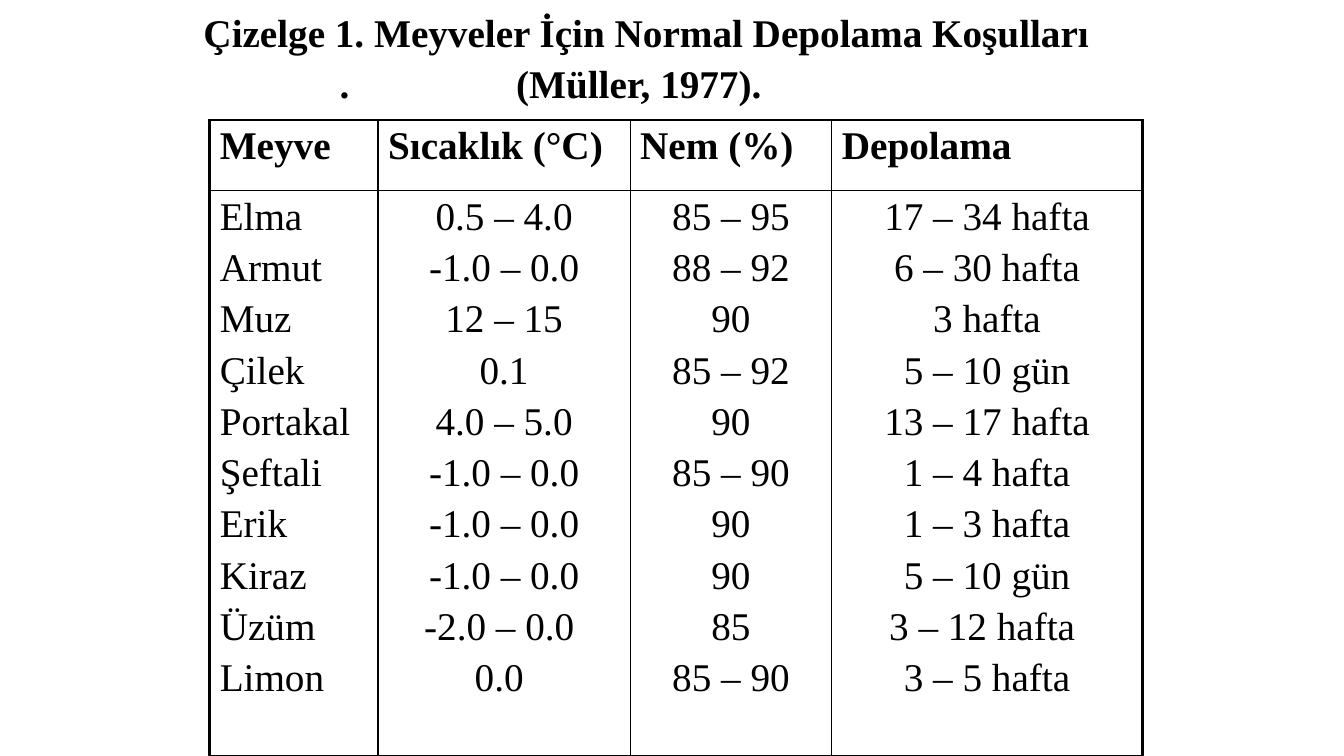
from lxml.etree import SubElement
from pptx import Presentation
from pptx.dml.color import RGBColor
from pptx.enum.text import PP_ALIGN
from pptx.oxml.ns import qn
from pptx.util import Inches, Pt

TITLE = "Çizelge 1. Meyveler İçin Normal Depolama Koşulları\v\t.\t(Müller, 1977)."
TITLE_TABS = (1.35, 3.1)
COLUMNS = [
    ("Meyve", 1.67, PP_ALIGN.LEFT,
     ["Elma", "Armut", "Muz", "Çilek", "Portakal", "Şeftali", "Erik", "Kiraz", "Üzüm", "Limon"]),
    ("Sıcaklık (°C)", 2.5, PP_ALIGN.CENTER,
     ["0.5 – 4.0", "-1.0 – 0.0", "12 – 15", "0.1", "4.0 – 5.0",
      "-1.0 – 0.0", "-1.0 – 0.0", "-1.0 – 0.0", "-2.0 – 0.0 ", "0.0 "]),
    ("Nem (%)", 2, PP_ALIGN.CENTER,
     ["85 – 95", "88 – 92", "90", "85 – 92", "90", "85 – 90", "90", "90", "85", "85 – 90"]),
    ("Depolama", 3.08, PP_ALIGN.CENTER,
     ["17 – 34 hafta", "6 – 30 hafta", "3 hafta", "5 – 10 gün", "13 – 17 hafta",
      "1 – 4 hafta", "1 – 3 hafta", "5 – 10 gün", "3 – 12 hafta ", "3 – 5 hafta"]),
]
ROW_HEIGHTS = (0.7, 5.61)
COLORS = {"ink": "000000", "page": "FFFFFF"}
FONT, SIZE = "Times New Roman", 28
OUTER, INNER = 2.25, 1


def style(para, bold):
    para.font.name = FONT
    para.font.size = Pt(SIZE)
    para.font.bold = bold
    para.font.color.rgb = RGBColor.from_string(COLORS["ink"])


def add_title(page):
    box = page.shapes.add_textbox(Inches(1.92), Inches(0), Inches(9.33), Inches(1.03))
    box.text_frame.word_wrap = True
    para = box.text_frame.paragraphs[0]
    para.text = TITLE
    para.line_spacing = 1.08
    style(para, True)
    properties = para._p.get_or_add_pPr()
    tabs = properties.makeelement(qn("a:tabLst"), {})
    for position in TITLE_TABS:
        SubElement(tabs, qn("a:tab"), pos=str(Inches(position)), algn="l")
    properties.find(qn("a:defRPr")).addprevious(tabs)


def set_borders(cell, widths):
    properties = cell._tc.get_or_add_tcPr()
    for side, width in widths.items():
        line = SubElement(properties, qn(f"a:ln{side}"), w=str(Pt(width)))
        fill = SubElement(line, qn("a:solidFill"))
        SubElement(fill, qn("a:srgbClr"), val=COLORS["ink"])


def fill_cell(cell, lines, align, bold):
    cell.text = "\n".join(lines)
    for index, para in enumerate(cell.text_frame.paragraphs):
        style(para, bold)
        para.alignment = align
        para.space_before = Pt(0.2 * SIZE if index else 0)


def add_storage_table(page):
    widths = [column[1] for column in COLUMNS]
    table = page.shapes.add_table(
        len(ROW_HEIGHTS), len(COLUMNS), Inches(2.08), Inches(1.19),
        Inches(sum(widths)), Inches(sum(ROW_HEIGHTS))).table
    table.first_row = table.horz_banding = False
    for row, height in zip(table.rows, ROW_HEIGHTS):
        row.height = Inches(height)
    last_row, last_column = len(ROW_HEIGHTS) - 1, len(COLUMNS) - 1
    for c, (heading, width, align, values) in enumerate(COLUMNS):
        table.columns[c].width = Inches(width)
        fill_cell(table.cell(0, c), [heading], PP_ALIGN.LEFT, True)
        fill_cell(table.cell(1, c), values, align, False)
        for r in range(len(ROW_HEIGHTS)):
            cell = table.cell(r, c)
            edges = {"L": c == 0, "R": c == last_column, "T": r == 0, "B": r == last_row}
            set_borders(cell, {side: OUTER if edge else INNER for side, edge in edges.items()})
            cell.fill.background()


def main():
    """Build the fruit storage conditions slide."""
    deck = Presentation()
    deck.slide_width, deck.slide_height = Inches(13.33), Inches(7.5)
    page = deck.slides.add_slide(deck.slide_layouts[6])
    page.background.fill.solid()
    page.background.fill.fore_color.rgb = RGBColor.from_string(COLORS["page"])
    add_title(page)
    add_storage_table(page)
    deck.save("out.pptx")


if __name__ == "__main__":
    main()
